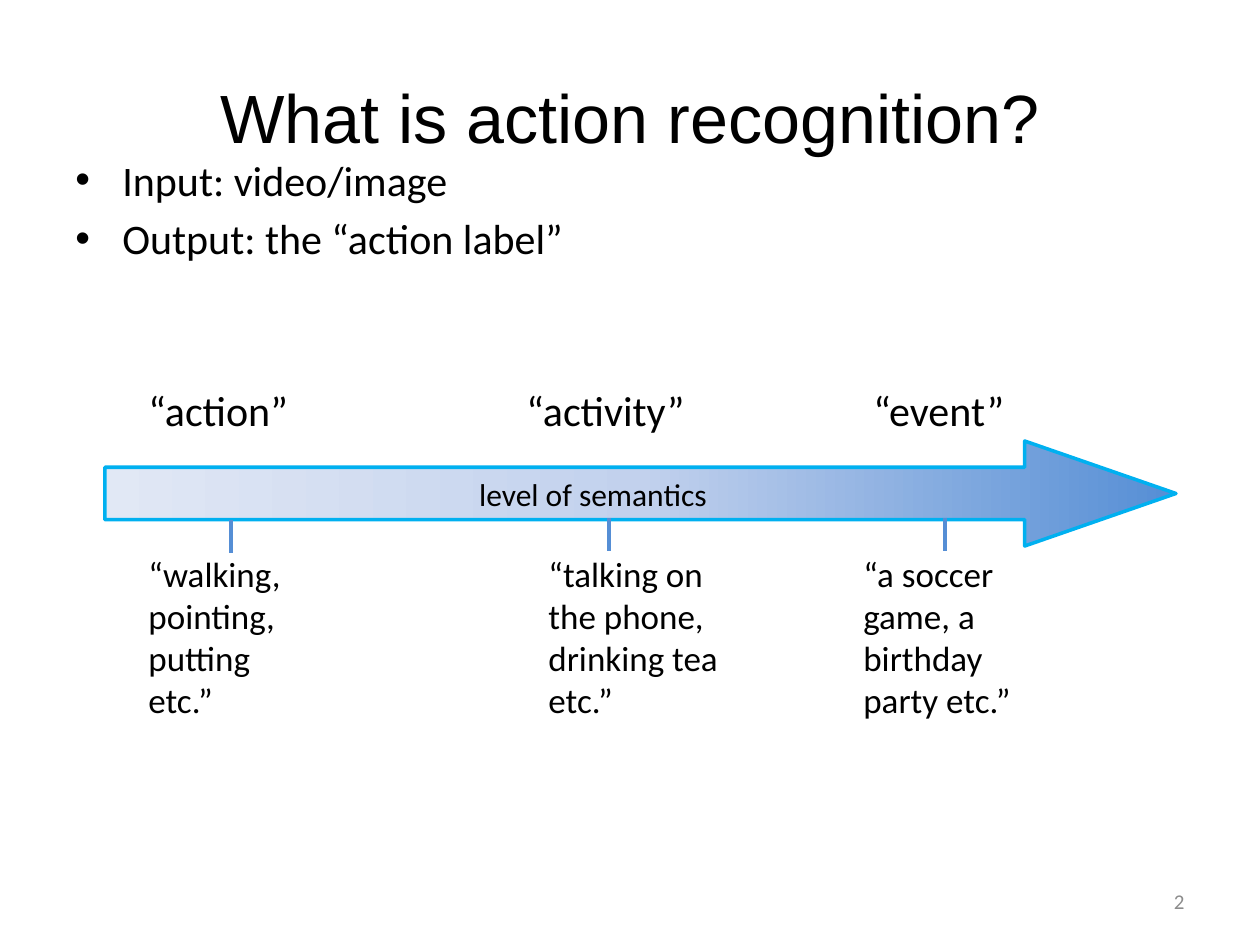
from lxml.etree import SubElement
from pptx import Presentation
from pptx.dml.color import RGBColor
from pptx.enum.shapes import MSO_CONNECTOR as Connector, MSO_SHAPE as Shape
from pptx.enum.text import MSO_ANCHOR as Anchor, MSO_AUTO_SIZE as AutoSize, PP_ALIGN as Align
from pptx.oxml import parse_xml
from pptx.oxml.ns import nsdecls, qn
from pptx.util import Emu, Pt

EMU_PER_PX = 914400 / 126
BLACK = RGBColor(0x00, 0x00, 0x00)
GRAY = RGBColor(0x8C, 0x8C, 0x8C)
CYAN = RGBColor(0x00, 0xB0, 0xF0)
BLUE = RGBColor(0x55, 0x8E, 0xD5)
MIST = RGBColor(0xC2, 0xD1, 0xED)
PALE = RGBColor(0xE1, 0xE8, 0xF5)

# label, label left, tick x, tick top, examples, examples left, examples width
LEVELS = [
    ("“action”", 136, 231, 520, ["“walking, pointing,", "putting", "etc.”"], 136, 189),
    ("“activity”", 514, 609, 518, ["“talking on the phone, drinking tea", "etc.”"], 536, 210),
    ("“event”", 861, 945, 518, ["“a soccer game, a birthday party etc.”"], 851, 189),
]


def px(length):
    return Emu(round(length * EMU_PER_PX))


def place(shape, left, top, width, height):
    shape.left, shape.top, shape.width, shape.height = map(px, (left, top, width, height))


def add_bullet(para, indent):
    properties = para._p.get_or_add_pPr()
    properties.set("marL", str(px(indent)))
    properties.set("indent", str(-px(indent)))
    SubElement(properties, qn("a:buFont")).set("typeface", "Arial")
    SubElement(properties, qn("a:buChar")).set("char", "•")


def write_text(shape, lines, size=20, color=BLACK, font="Calibri", align=Align.LEFT,
               anchor=Anchor.TOP, gap=0, bullet_indent=0):
    frame = shape.text_frame
    frame.word_wrap = True
    frame.auto_size = AutoSize.NONE
    frame.vertical_anchor = anchor
    for index, line in enumerate(lines):
        para = frame.paragraphs[0] if index == 0 else frame.add_paragraph()
        para.alignment = align
        para.space_before = Pt(gap if index else 0)
        if bullet_indent:
            add_bullet(para, bullet_indent)
        span = para.add_run()
        span.text = line
        span.font.size = Pt(size)
        span.font.name = font
        span.font.color.rgb = color


def add_text(slide, area, lines, **text_format):
    box = slide.shapes.add_textbox(*map(px, area))
    write_text(box, lines, **text_format)


def add_semantics_arrow(slide):
    arrow = slide.shapes.add_shape(Shape.RIGHT_ARROW, *map(px, (105, 441, 1071, 105)))
    arrow.adjustments[0] = 0.5
    arrow.adjustments[1] = 1.44
    arrow.shadow.inherit = False
    arrow.line.color.rgb = CYAN
    arrow.line.width = Pt(2)
    stops = "".join(
        f'<a:gs pos="{percent * 1000}"><a:srgbClr val="{color}"/></a:gs>'
        for percent, color in ((0, BLUE), (50, MIST), (100, PALE)))
    gradient = parse_xml(
        f'<a:gradFill {nsdecls("a")} rotWithShape="1"><a:gsLst>{stops}</a:gsLst>'
        '<a:lin ang="10800000" scaled="0"/></a:gradFill>')
    arrow._element.spPr.find(qn("a:prstGeom")).addnext(gradient)


def add_tick(slide, x, top):
    tick = slide.shapes.add_connector(Connector.STRAIGHT, px(x), px(top), px(x), px(top + 33))
    tick.line.color.rgb = BLUE
    tick.line.width = Pt(1.75)
    SubElement(tick._element.spPr, qn("a:effectLst"))


def main():
    deck = Presentation()
    deck.slide_width, deck.slide_height = px(1260), px(945)
    slide = deck.slides.add_slide(deck.slide_layouts.get_by_name("Title Only"))

    title = slide.shapes.title
    place(title, 63, 38, 1134, 157)
    write_text(title, ["What is action recognition?"], size=39, font="Arial",
               align=Align.CENTER, anchor=Anchor.MIDDLE)
    add_text(slide, (63, 148, 1134, 179), ["Input: video/image", "Output: the “action label”"],
             size=24, gap=4.8, bullet_indent=47)

    add_semantics_arrow(slide)
    add_text(slide, (462, 469, 262, 50), ["level of semantics"], size=18, align=Align.CENTER)
    for label, label_left, tick_x, tick_top, examples, left, width in LEVELS:
        add_text(slide, (label_left, 378, 189, 63), [label], size=24)
        add_text(slide, (left, 546, width, 183), examples)
        add_tick(slide, tick_x, tick_top)

    add_text(slide, (903, 876, 294, 50), ["2"], size=12, color=GRAY,
             align=Align.RIGHT, anchor=Anchor.MIDDLE)
    deck.save("out.pptx")


if __name__ == "__main__":
    main()
